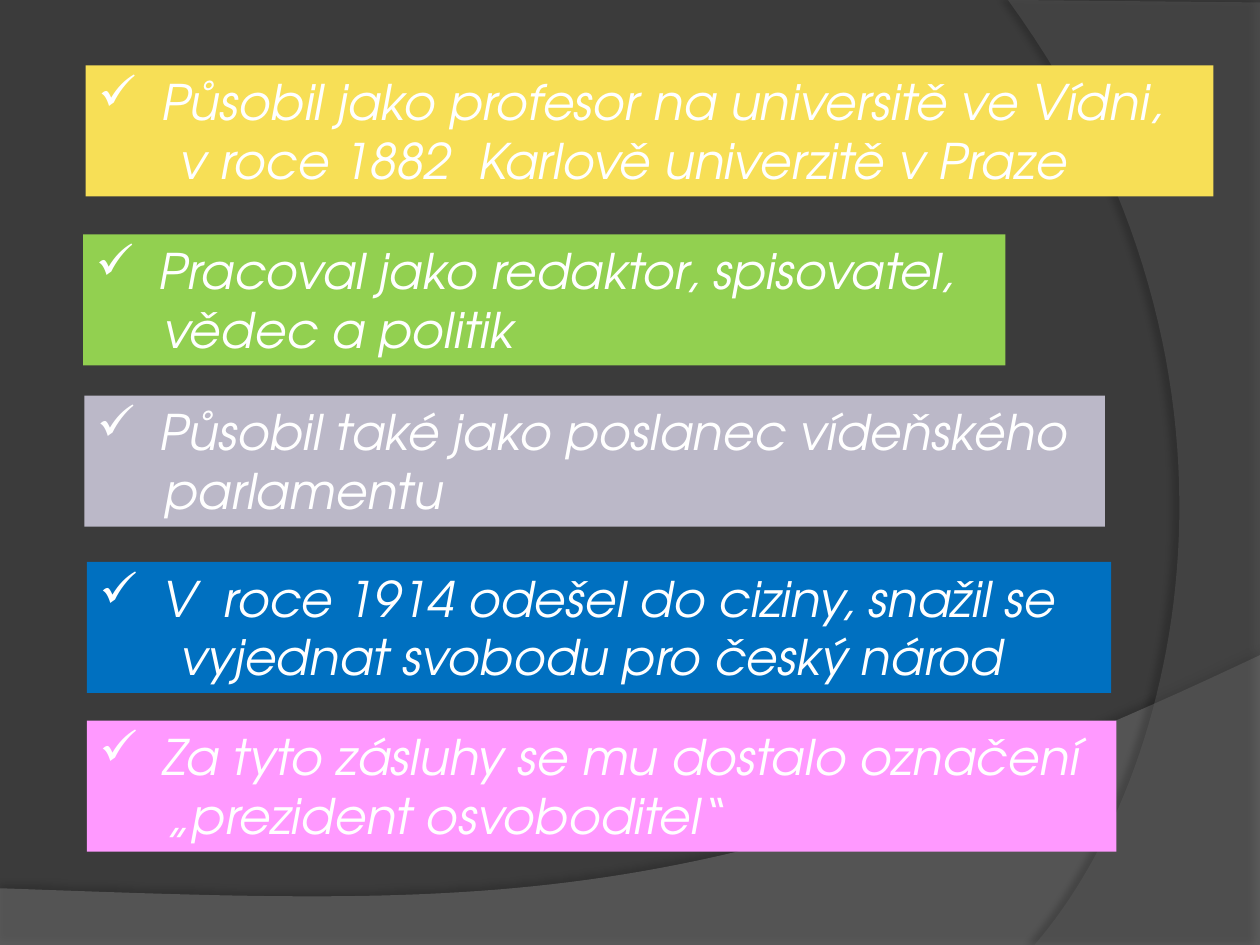
from dataclasses import dataclass

from lxml.etree import SubElement
from pptx import Presentation
from pptx.dml.color import RGBColor
from pptx.enum.text import MSO_ANCHOR, MSO_AUTO_SIZE, PP_ALIGN
from pptx.oxml.ns import qn
from pptx.util import Inches, Pt


@dataclass(frozen=True)
class Theme:
    """Colours and type of the slide."""

    background: str = "3B3B3B"
    lower_wave: str = "7F7F7F"
    right_wave: str = "5E5E5E"
    shadow: str = "000000"
    text: str = "FFFFFF"
    yellow: str = "F7DF56"
    green: str = "92D050"
    lavender: str = "BBB8C8"
    blue: str = "0070C0"
    pink: str = "FF99FF"
    font: str = "TeX Gyre Adventor"
    size: int = 28


THEME = Theme()
WIDTH, HEIGHT = Inches(10), Inches(7.5)
PANEL_HEIGHT = 1.04 / 7.5
BULLET_INDENT = Inches(0.5)
SPACE_WIDTH = Pt(THEME.size * 0.277)
CURVE_STEPS = 60

PANELS = [
    (0.068, 0.52, 0.895, THEME.yellow, 6,
     "Působil jako profesor na universitě ve Vídni,",
     "v roce 1882  Karlově univerzitě v Praze"),
    (0.066, 1.86, 0.732, THEME.green, 5,
     "Pracoval jako redaktor, spisovatel,", "vědec a politik"),
    (0.067, 3.14, 0.81, THEME.lavender, 5,
     "Působil také jako poslanec vídeňského", "parlamentu"),
    (0.069, 4.46, 0.813, THEME.blue, 6,
     "V  roce 1914 odešel do ciziny, snažil se",
     "vyjednat svobodu pro český národ"),
    (0.069, 5.72, 0.817, THEME.pink, 5,
     "Za tyto zásluhy se mu dostalo označení", "„prezident osvoboditel“"),
]


def curve_points(start, first_control, second_control, end):
    """Return points along a cubic curve."""
    points = []
    for step in range(CURVE_STEPS + 1):
        t = step / CURVE_STEPS
        weights = ((1 - t) ** 3, 3 * t * (1 - t) ** 2, 3 * t * t * (1 - t), t ** 3)
        corners = (start, first_control, second_control, end)
        points.append(tuple(
            sum(weight * corner[axis] for weight, corner in zip(weights, corners))
            for axis in (0, 1)
        ))
    return points


def add_alpha(colour, percent):
    """Give a colour element an opacity."""
    SubElement(colour, qn("a:alpha"), val=str(percent * 1000))


def add_wave(slide, points, colour, opacity, shadow_opacity, distance, direction):
    """Draw a translucent area with a soft shadow."""
    points = [(Inches(x), Inches(y)) for x, y in points]
    builder = slide.shapes.build_freeform(*points[0], scale=1.0)
    builder.add_line_segments(points[1:], close=True)
    shape = builder.convert_to_shape()
    shape.fill.solid()
    shape.fill.fore_color.rgb = RGBColor.from_string(colour)
    shape.line.fill.background()
    properties = shape.element.spPr
    add_alpha(properties.find(qn("a:solidFill"))[0], opacity)
    effects = SubElement(properties, qn("a:effectLst"))
    shadow = SubElement(
        effects, qn("a:outerShdw"), blurRad=str(Pt(4)), dist=str(Pt(distance)),
        dir=str(direction * 60000), algn="ctr", rotWithShape="0",
    )
    add_alpha(SubElement(shadow, qn("a:srgbClr"), val=THEME.shadow), shadow_opacity)


def add_background(slide):
    """Draw the dark background with its two waves."""
    slide.background.fill.solid()
    slide.background.fill.fore_color.rgb = RGBColor.from_string(THEME.background)
    lower = [(0, 7.5), (10, 7.5)]
    lower += curve_points((10, 5.2), (5.59, 7.29), (3.91, 7.19), (0, 7.05))
    add_wave(slide, lower, THEME.lower_wave, 45, 35, 3.5, 270)
    right = [(10, 0.02), (10, 7.5)]
    right += curve_points((8.21, 7.5), (9.35, 6.19), (10.18, 3), (8, 0))
    add_wave(slide, right, THEME.right_wave, 40, 45, 4, 180)


def format_paragraph(paragraph, margin, bullet=None):
    """Set type, indent and optional bullet."""
    paragraph.alignment = PP_ALIGN.LEFT
    properties = paragraph._p.get_or_add_pPr()
    properties.set("marL", str(margin))
    properties.set("indent", str(-margin if bullet else 0))
    if bullet:
        SubElement(properties, qn("a:buChar"), char=bullet)
    for run in paragraph.runs:
        run.font.name = THEME.font
        run.font.size = Pt(THEME.size)
        run.font.italic = True
        run.font.color.rgb = RGBColor.from_string(THEME.text)


def add_panel(slide, left, top, width, colour, spaces, first_line, second_line):
    """Add a coloured panel with a ticked statement."""
    panel = slide.shapes.add_textbox(
        round(left * WIDTH), Inches(top), round(width * WIDTH),
        round(PANEL_HEIGHT * HEIGHT),
    )
    panel.fill.solid()
    panel.fill.fore_color.rgb = RGBColor.from_string(colour)
    frame = panel.text_frame
    frame.word_wrap = True
    frame.auto_size = MSO_AUTO_SIZE.SHAPE_TO_FIT_TEXT
    frame.vertical_anchor = MSO_ANCHOR.TOP
    frame.text = f"{first_line}\n{second_line}"
    statement, continuation = frame.paragraphs
    format_paragraph(statement, BULLET_INDENT, "✓")
    format_paragraph(continuation, spaces * SPACE_WIDTH)


def main():
    """Build and save the slide."""
    presentation = Presentation()
    presentation.slide_width, presentation.slide_height = WIDTH, HEIGHT
    slide = presentation.slides.add_slide(presentation.slide_layouts[6])
    add_background(slide)
    for panel in PANELS:
        add_panel(slide, *panel)
    presentation.save("out.pptx")


if __name__ == "__main__":
    main()
